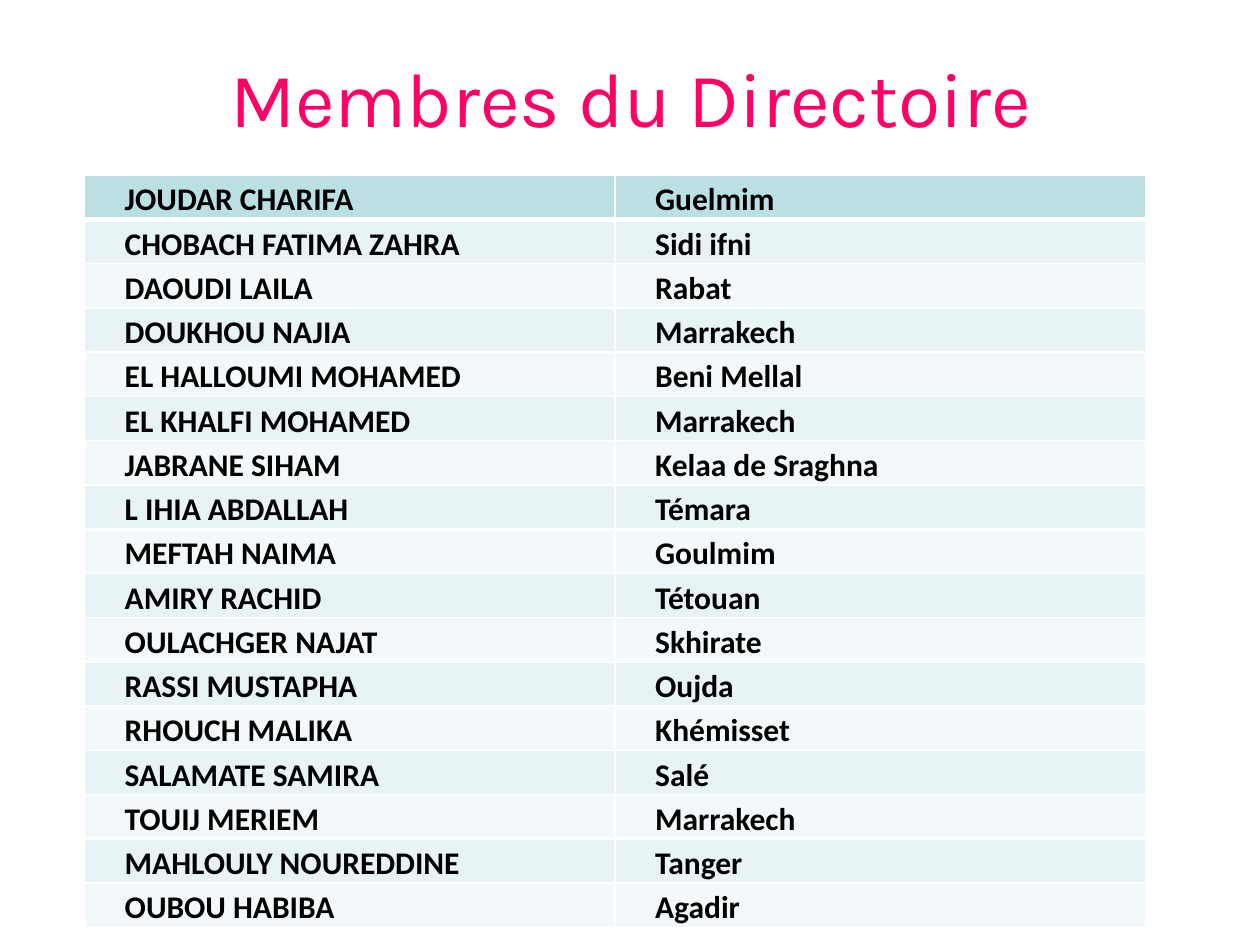
from dataclasses import dataclass

from pptx import Presentation
from pptx.dml.color import RGBColor
from pptx.enum.text import MSO_ANCHOR, PP_ALIGN
from pptx.oxml import parse_xml
from pptx.oxml.ns import nsdecls
from pptx.util import Inches, Pt


@dataclass(frozen=True)
class Theme:
    title: str = "FF0066"
    text: str = "000000"
    border: str = "FFFFFF"
    header: str = "BBE0E3"
    bands: tuple = ("E7F3F4", "F3F9FA")
    title_font: str = "Karla"
    body_font: str = "Calibri"
    title_size: int = 44
    body_size: int = 18


theme = Theme()

members = [
    ("JOUDAR CHARIFA", "Guelmim"),
    ("CHOBACH FATIMA ZAHRA", "Sidi ifni"),
    ("DAOUDI LAILA", "Rabat"),
    ("DOUKHOU NAJIA", "Marrakech"),
    ("EL HALLOUMI MOHAMED", "Beni Mellal"),
    ("EL KHALFI MOHAMED", "Marrakech"),
    ("JABRANE SIHAM", "Kelaa de Sraghna"),
    ("L IHIA ABDALLAH", "Témara"),
    ("MEFTAH NAIMA", "Goulmim"),
    ("AMIRY RACHID", "Tétouan"),
    ("OULACHGER NAJAT", "Skhirate"),
    ("RASSI MUSTAPHA", "Oujda"),
    ("RHOUCH MALIKA", "Khémisset"),
    ("SALAMATE SAMIRA", "Salé"),
    ("TOUIJ MERIEM", "Marrakech"),
    ("MAHLOULY NOUREDDINE", "Tanger"),
    ("OUBOU HABIBA", "Agadir"),
]


def set_font(p, name, size, color, bold=False):
    p.font.name = name
    p.font.size = Pt(size)
    p.font.bold = bold
    p.font.color.rgb = RGBColor.from_string(color)


def add_borders(cell, bottom_width):
    tcPr = cell._tc.get_or_add_tcPr()
    for side, width in (("L", 1), ("R", 1), ("T", 1), ("B", bottom_width)):
        tcPr.append(parse_xml(
            f'<a:ln{side} {nsdecls("a")} w="{Pt(width)}"><a:solidFill>'
            f'<a:srgbClr val="{theme.border}"/></a:solidFill></a:ln{side}>'
        ))


prs = Presentation()
prs.slide_width, prs.slide_height = Inches(10), Inches(7.5)
s = prs.slides.add_slide(prs.slide_layouts[5])

title = s.shapes.title
title.left, title.top = Inches(0.51), Inches(-0.02)
title.width, title.height = Inches(9), Inches(1.57)
tf = title.text_frame
tf.text = "Membres du Directoire"
tf.word_wrap = True
tf.vertical_anchor = MSO_ANCHOR.MIDDLE
p = tf.paragraphs[0]
p.alignment = PP_ALIGN.CENTER
set_font(p, theme.title_font, theme.title_size, theme.title)

row_height = Inches(0.35)
table = s.shapes.add_table(
    len(members), 2, Inches(0.67), Inches(1.39), Inches(8.42), row_height * len(members)
).table
for row in table.rows:
    row.height = row_height

for i, member in enumerate(members):
    fill = theme.bands[(i - 1) % 2] if i else theme.header
    for j, text in enumerate(member):
        cell = table.cell(i, j)
        cell.margin_left = cell.margin_right = Inches(0.07)
        cell.margin_top = cell.margin_bottom = 0
        add_borders(cell, 1 if i else 3)
        cell.fill.solid()
        cell.fill.fore_color.rgb = RGBColor.from_string(fill)
        cell.text = text
        p = cell.text_frame.paragraphs[0]
        p._p.get_or_add_pPr().set("marL", str(Inches(0.25)))
        p.line_spacing = 1.15
        set_font(p, theme.body_font, theme.body_size, theme.text, bold=True)

prs.save("out.pptx")
